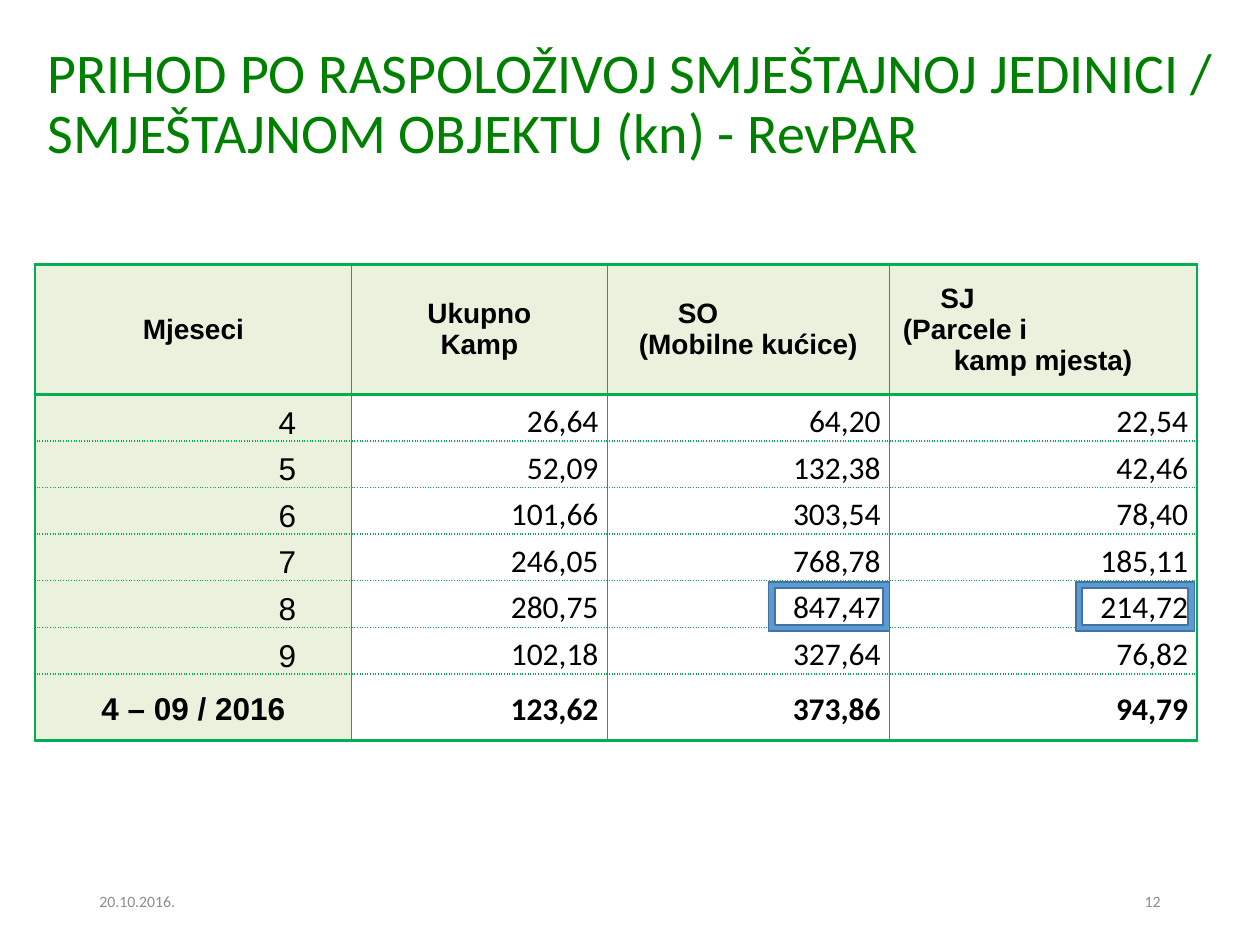
from dataclasses import dataclass
from typing import Optional

from lxml.etree import SubElement
from pptx import Presentation
from pptx.dml.color import RGBColor
from pptx.enum.shapes import MSO_SHAPE as Shape
from pptx.enum.text import MSO_ANCHOR as Anchor, PP_ALIGN as Align
from pptx.oxml.ns import qn
from pptx.util import Inches, Pt


@dataclass(frozen=True)
class Theme:
    title: str = "008000"
    ink: str = "000000"
    muted: str = "8C8C8C"
    rule: str = "00B050"
    tint: str = "EAF1DD"
    paper: str = "FFFFFF"
    frame: str = "5B9BD5"
    frame_line: str = "43739E"
    body_font: str = "Calibri"
    label_font: str = "Arial"
    title_size: int = 32
    value_size: int = 18
    header_size: int = 16
    footer_size: int = 9
    thick: float = 1.5
    thin: float = 1
    plain_table: str = "{2D5ABB26-0587-4C30-8999-92F81FD0307C}"


@dataclass(frozen=True)
class Line:
    text: str
    right_indent: float = 0


@dataclass(frozen=True)
class Box:
    left: float
    top: float
    width: float
    height: float

    def lengths(self) -> tuple:
        return tuple(Inches(n) for n in (self.left, self.top, self.width, self.height))


THEME = Theme()
TABLE_BOX = Box(0.28, 2.1, 9.22, 3.78)
COLUMN_WIDTHS = (2.51, 2.03, 2.24, 2.44)
ROW_HEIGHTS = (1.03, *[0.37] * 6, 0.53)
HEADERS = (
    (Line("Mjeseci"),),
    (Line("Ukupno"), Line("Kamp")),
    (Line("SO", 0.8), Line("(Mobilne kućice)")),
    (Line("SJ", 1.36), Line("(Parcele i", 1.24), Line("kamp mjesta)")),
)
MONTHS = (
    ("4", "26,64", "64,20", "22,54"),
    ("5", "52,09", "132,38", "42,46"),
    ("6", "101,66", "303,54", "78,40"),
    ("7", "246,05", "768,78", "185,11"),
    ("8", "280,75", "847,47", "214,72"),
    ("9", "102,18", "327,64", "76,82"),
)
SEASON = ("4 – 09 / 2016", "123,62", "373,86", "94,79")
PEAK_FRAMES = (Box(6.1, 4.62, 0.96, 0.39), Box(8.54, 4.62, 0.94, 0.39))


def write(text_frame, lines: tuple, *, size: float, color: str = THEME.ink,
          font: str = THEME.body_font, bold: bool = False, align=Align.LEFT,
          spacing: Optional[float] = None, after: float = 0) -> None:
    for index, line in enumerate(lines):
        paragraph = text_frame.add_paragraph() if index else text_frame.paragraphs[0]
        paragraph._p.get_or_add_pPr().set("marR", str(Inches(line.right_indent)))
        paragraph.alignment = align
        paragraph.space_after = Pt(after)
        if spacing:
            paragraph.line_spacing = spacing
        run = paragraph.add_run()
        run.text = line.text
        run.font.name = font
        run.font.size = Pt(size)
        run.font.bold = bold
        run.font.color.rgb = RGBColor.from_string(color)


def add_text(slide, box: Box, text: str, **text_format) -> None:
    frame = slide.shapes.add_textbox(*box.lengths()).text_frame
    frame.word_wrap = True
    frame.vertical_anchor = Anchor.MIDDLE
    write(frame, (Line(text),), **text_format)


def add_border(cell, side: str, width: float, dash: str) -> None:
    border = SubElement(cell._tc.get_or_add_tcPr(), qn(f"a:ln{side}"), w=str(Pt(width)))
    fill = SubElement(border, qn("a:solidFill"))
    SubElement(fill, qn("a:srgbClr"), val=THEME.rule)
    SubElement(border, qn("a:prstDash"), val=dash)


def style_cell(cell, row: int, column: int) -> None:
    last_row, last_column = len(ROW_HEIGHTS) - 1, len(COLUMN_WIDTHS) - 1
    solid_top, solid_bottom = row <= 1, row in (0, last_row)
    borders = (
        ("L", column == 0, "solid"),
        ("R", column == last_column, "solid"),
        ("T", solid_top, "solid" if solid_top else "sysDot"),
        ("B", solid_bottom, "solid" if solid_bottom else "sysDot"),
    )
    for side, is_thick, dash in borders:
        add_border(cell, side, THEME.thick if is_thick else THEME.thin, dash)
    cell.fill.solid()
    tinted = row == 0 or column == 0
    cell.fill.fore_color.rgb = RGBColor.from_string(THEME.tint if tinted else THEME.paper)
    cell.margin_left = cell.margin_right = Inches(0.07)
    cell.margin_top = cell.margin_bottom = 0
    cell.vertical_anchor = Anchor.MIDDLE if row in (0, last_row) else Anchor.BOTTOM


def add_revenue_table(slide) -> None:
    table = slide.shapes.add_table(
        len(ROW_HEIGHTS), len(COLUMN_WIDTHS), *TABLE_BOX.lengths()).table
    table.first_row = table.horz_banding = False
    table._tbl.tblPr.find(qn("a:tableStyleId")).text = THEME.plain_table
    for column, width in zip(table.columns, COLUMN_WIDTHS):
        column.width = Inches(width)
    for row, height in zip(table.rows, ROW_HEIGHTS):
        row.height = Inches(height)

    for column, lines in enumerate(HEADERS):
        cell = table.cell(0, column)
        style_cell(cell, 0, column)
        write(cell.text_frame, lines, size=THEME.header_size,
              font=THEME.label_font, bold=True, align=Align.CENTER)

    for row, entries in enumerate((*MONTHS, SEASON), start=1):
        is_season = entries is SEASON
        for column, entry in enumerate(entries):
            is_label = column == 0
            cell = table.cell(row, column)
            style_cell(cell, row, column)
            indent = 0.37 if is_label and not is_season else 0
            write(cell.text_frame, (Line(entry, indent),), size=THEME.value_size,
                  font=THEME.label_font if is_label else THEME.body_font,
                  bold=is_season, spacing=1.15,
                  align=Align.CENTER if is_label and is_season else Align.RIGHT,
                  after=10 if is_season and not is_label else 0)


def add_peak_frame(slide, box: Box) -> None:
    frame = slide.shapes.add_shape(Shape.FRAME, *box.lengths())
    frame.shadow.inherit = False
    frame.fill.solid()
    frame.fill.fore_color.rgb = RGBColor.from_string(THEME.frame)
    frame.line.color.rgb = RGBColor.from_string(THEME.frame_line)
    frame.line.width = Pt(THEME.thin)


def main() -> None:
    deck = Presentation()
    deck.slide_width, deck.slide_height = Inches(10), Inches(7.5)
    slide = deck.slides.add_slide(deck.slide_layouts[6])
    add_text(slide, Box(0.28, 0.21, 9.57, 1.25),
             "PRIHOD PO RASPOLOŽIVOJ SMJEŠTAJNOJ JEDINICI / "
             "SMJEŠTAJNOM OBJEKTU (kn) - RevPAR",
             size=THEME.title_size, color=THEME.title, spacing=0.9)
    add_revenue_table(slide)
    footer = {"size": THEME.footer_size, "color": THEME.muted}
    add_text(slide, Box(0.69, 6.95, 2.25, 0.4), "20.10.2016.", **footer)
    add_text(slide, Box(7.06, 6.95, 2.25, 0.4), "12", align=Align.RIGHT, **footer)
    for box in PEAK_FRAMES:
        add_peak_frame(slide, box)
    deck.save("out.pptx")


if __name__ == "__main__":
    main()
